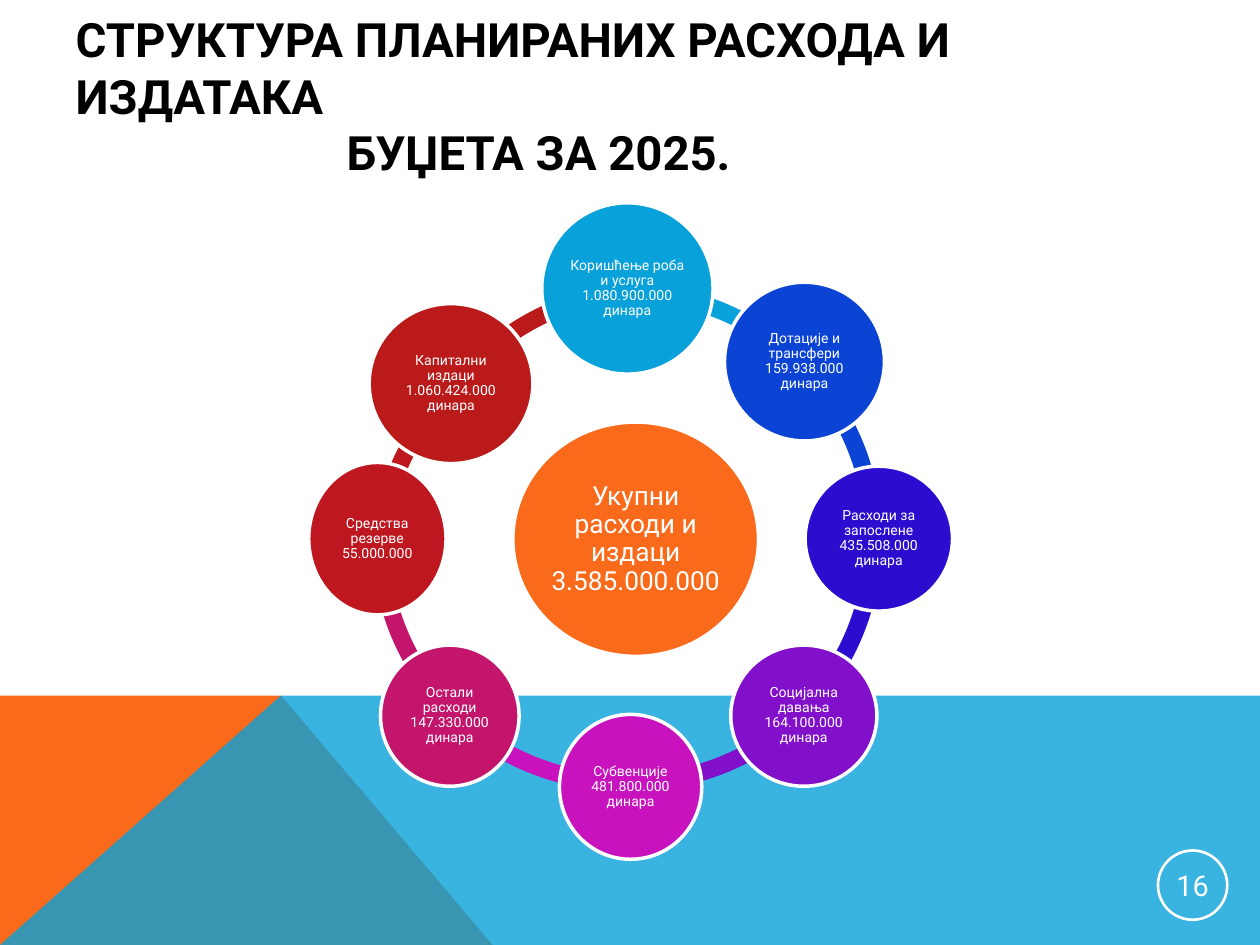
from lxml import etree
from pptx import Presentation
from pptx import util as u
from pptx.dml.color import RGBColor
from pptx.enum import shapes, text
from pptx.oxml.ns import qn

In = u.Inches
WHITE, ORANGE, BLUE = "FFFFFF", "F96A1B", "08A1D9"


def paint(color_format, hex_color):
    color_format.rgb = RGBColor.from_string(hex_color)


def add_circle(box, fill, line_width, words, size, spacing):
    """Add a white-edged ellipse with centred white text; fill may be None."""
    circle = slide.shapes.add_shape(shapes.MSO_SHAPE.OVAL, *map(In, box))
    circle.shadow.inherit = False
    if fill:
        circle.fill.solid()
        paint(circle.fill.fore_color, fill)
    else:
        circle.fill.background()
    paint(circle.line.color, WHITE)
    circle.line.width = u.Pt(line_width)
    frame = circle.text_frame
    frame.margin_left = frame.margin_right = frame.margin_top = frame.margin_bottom = 0
    frame.word_wrap = True
    frame.vertical_anchor = text.MSO_ANCHOR.MIDDLE
    frame.text = words
    paragraph = frame.paragraphs[0]
    paragraph.alignment = text.PP_ALIGN.CENTER
    paragraph.line_spacing = spacing
    font = paragraph.runs[0].font
    font.name, font.size = "Roboto", u.Pt(size)
    paint(font.color, WHITE)


prs = Presentation()
prs.slide_width, prs.slide_height = In(10), In(7.5)
slide = prs.slides.add_slide(prs.slide_layouts[5])

# Coloured bands along the bottom: points, colour, opacity in percent
bands = [
    ([(0, 7.5), (0, 5.52), (2.23, 5.52), (3.91, 7.5)], ORANGE, 100),
    ([(0, 7.5), (2.23, 5.52), (10, 5.52), (10, 7.5)], BLUE, 80),
]
for points, color, opacity in bands:
    corners = [(In(x), In(y)) for x, y in points]
    builder = slide.shapes.build_freeform(*corners[0])
    builder.add_line_segments(corners[1:], close=True)
    band = builder.convert_to_shape()
    band.shadow.inherit = False
    band.line.fill.background()
    band.fill.solid()
    paint(band.fill.fore_color, color)
    if opacity < 100:
        srgb = band.fill._xPr.find(qn("a:solidFill")).find(qn("a:srgbClr"))
        etree.SubElement(srgb, qn("a:alpha")).set("val", str(opacity * 1000))

title = slide.shapes.title
title.left, title.top, title.width, title.height = map(In, (0.5, 0.29, 9, 0.93))
heading = title.text_frame
heading.text = "СТРУКТУРА ПЛАНИРАНИХ РАСХОДА И ИЗДАТАКА\nБУЏЕТА ЗА 2025."
heading.word_wrap = True
heading.auto_size = text.MSO_AUTO_SIZE.NONE
heading.vertical_anchor = text.MSO_ANCHOR.MIDDLE
for paragraph in heading.paragraphs:
    paragraph.alignment = text.PP_ALIGN.LEFT
    paragraph.line_spacing = u.Pt(32.5)
    paragraph.space_before = u.Pt(0)
    font = paragraph.runs[0].font
    font.name, font.size, font.bold = "Roboto", u.Pt(27), True
    paint(font.color, "000000")
heading.paragraphs[1]._p.get_or_add_pPr().set("marL", str(In(2.15)))

add_circle((9.19, 6.75, 0.55, 0.55), None, 1.5, "16", 16.5, 1.0)

# Clockwise from the top: circle box, colour, words,
# then left, top, start and end (raw adjustments) of the arc that follows
expenses = [
    ((4.3, 1.61, 1.36, 1.36), BLUE, "Коришћење роба и услуга 1.080.900.000 динара",
     (2.95, 2.25, 162, 189)),
    ((5.75, 2.24, 1.27, 1.26), "0B44D4", "Дотације и трансфери 159.938.000 динара",
     (2.95, 2.25, 189, 0)),
    ((6.39, 3.7, 1.17, 1.15), "2C0DD0", "Расходи за запослене 435.508.000 динара",
     (2.95, 2.25, 0, 27)),
    ((5.8, 5.12, 1.16, 1.12), "8210CB", "Социјална давања 164.100.000 динара",
     (2.98, 2.23, 27.56, 53.88)),
    ((4.44, 5.67, 1.13, 1.15), "C712BD", "Субвенције 481.800.000 динара",
     (2.93, 2.23, 53.1, 80.46)),
    ((3.02, 5.12, 1.1, 1.12), "C2156B", "Остали расходи 147.330.000 динара",
     (2.95, 2.25, 81, 108)),
    ((2.45, 3.67, 1.09, 1.21), "BE1720", "Средства резерве 55.000.000",
     (2.94, 2.45, 111.49, 135.56)),
    ((2.93, 2.41, 1.3, 1.27), "BA1A19", "Капитални издаци 1.060.424.000 динара",
     (3.13, 2.24, 130.7, 158.93)),
]
for _, color, _, (left, top, start, end) in reversed(expenses):
    arc = slide.shapes.add_shape(
        shapes.MSO_SHAPE.BLOCK_ARC, In(left), In(top), In(4.05), In(4.05))
    for i, value in enumerate((start, end, 0.034)):
        arc.adjustments[i] = value
    arc.shadow.inherit = False
    arc.line.fill.background()
    arc.fill.solid()
    paint(arc.fill.fore_color, color)

add_circle((4.07, 3.35, 1.95, 1.86), ORANGE, 2,
           "Укупни расходи и издаци 3.585.000.000", 15, 0.9)
for box, color, words, _ in expenses:
    add_circle(box, color, 2, words, 8, 0.9)

prs.save("out.pptx")
